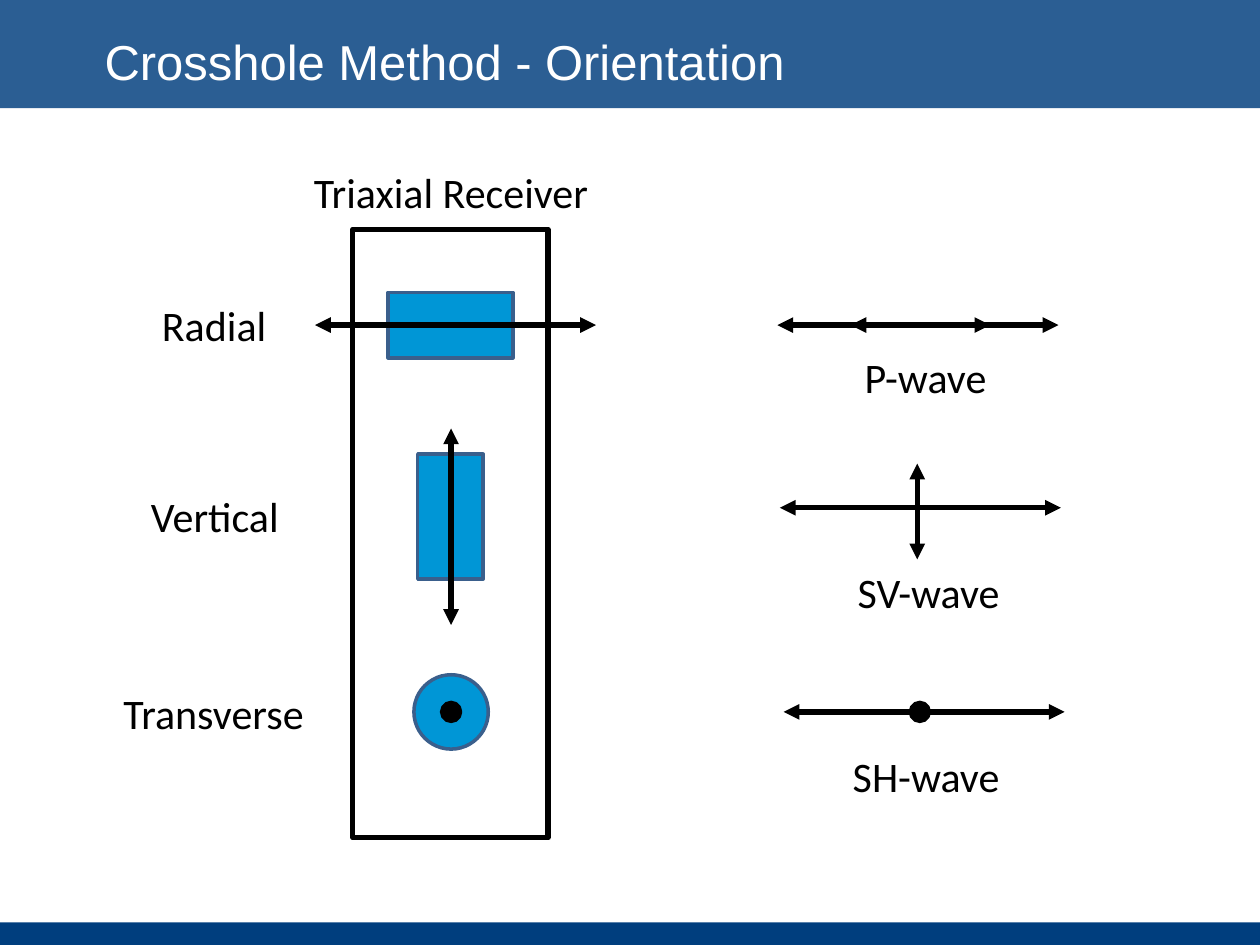
from pptx import Presentation
from pptx.dml.color import RGBColor
from pptx.enum.shapes import MSO_CONNECTOR, MSO_SHAPE
from pptx.enum.text import MSO_ANCHOR, MSO_AUTO_SIZE, PP_ALIGN
from pptx.oxml.ns import qn
from pptx.util import Inches, Pt
from lxml.etree import SubElement

NAVY, SKY, EDGE = "003E7E", "0096D6", "3A5F8C"
BLACK, WHITE = "000000", "FFFFFF"


def tint(text):
    return RGBColor.from_string(text)


class Sketch:
    font, size, stroke = "Calibri", 24, 3

    def __init__(self, slide):
        self.slide = slide
        self.home = slide.shapes

    def group(self):
        """Send the shapes that follow into a new group."""
        self.home = self.slide.shapes.add_group_shape().shapes

    def ungroup(self):
        self.home = self.slide.shapes

    def shape(self, kind, x, y, w, h, fill=None, line=None, width=2, turn=0):
        item = self.home.add_shape(kind, Inches(x), Inches(y), Inches(w), Inches(h))
        item.shadow.inherit = False
        item.rotation = turn
        if fill:
            item.fill.solid()
            item.fill.fore_color.rgb = tint(fill)
        else:
            item.fill.background()
        if line:
            item.line.color.rgb = tint(line)
            item.line.width = Pt(width)
        else:
            item.line.fill.background()
        return item

    def dot(self, x, y, size, fill, line):
        """Draw a circle around its centre."""
        half = size / 2
        self.shape(MSO_SHAPE.OVAL, x - half, y - half, size, size, fill, line)

    def arrow(self, x1, y1, x2, y2):
        """Draw a line with a head at both ends."""
        item = self.home.add_connector(
            MSO_CONNECTOR.STRAIGHT, Inches(x1), Inches(y1), Inches(x2), Inches(y2))
        item.line.color.rgb = tint(BLACK)
        item.line.width = Pt(self.stroke)
        edge = item.line._get_or_add_ln()
        for tag in ("a:headEnd", "a:tailEnd"):
            SubElement(edge, qn(tag), type="triangle")
        SubElement(item.element.spPr, qn("a:effectLst"))

    def label(self, text, x, y, w):
        box = self.slide.shapes.add_textbox(Inches(x), Inches(y), Inches(w), Inches(0.5))
        frame = box.text_frame
        frame.word_wrap = False
        frame.auto_size = MSO_AUTO_SIZE.SHAPE_TO_FIT_TEXT
        frame.text = text
        para = frame.paragraphs[0]
        para.alignment = PP_ALIGN.CENTER
        self.style(para.runs[0].font, self.font, self.size, BLACK)

    def title(self, text):
        item = self.slide.shapes.title
        item.left, item.top = Inches(0.73), Inches(0.19)
        item.width, item.height = Inches(6.77), Inches(0.58)
        frame = item.text_frame
        frame.text = text
        frame.vertical_anchor = MSO_ANCHOR.MIDDLE
        para = frame.paragraphs[0]
        para.alignment = PP_ALIGN.LEFT
        self.style(para.runs[0].font, "Arial", 28, WHITE)
        # Bring the title in front of the banner
        item.element.getparent().append(item.element)

    def style(self, font, name, size, color):
        font.name, font.size = name, Pt(size)
        font.color.rgb = tint(color)


def main():
    deck = Presentation()
    deck.slide_width, deck.slide_height = Inches(10), Inches(7.5)
    art = Sketch(deck.slides.add_slide(deck.slide_layouts[5]))
    rect = MSO_SHAPE.RECTANGLE

    # Header and footer bands
    art.shape(rect, 0, 7.32, 10, 0.18, NAVY)
    banner = art.shape(rect, 0, 0, 10, 0.86, NAVY)
    color = banner.element.spPr.find(qn("a:solidFill")).find(qn("a:srgbClr"))
    SubElement(color, qn("a:alpha"), val="83000")
    art.title("Crosshole Method - Orientation")

    # Receiver with its three sensors
    mid, radial, shear = 3.58, 2.58, 5.65
    art.shape(rect, 2.8, 1.82, 1.55, 4.83, line=BLACK, width=3)
    for top, turn in ((2.32, 0), (3.84, 90)):
        art.shape(rect, 3.08, top, 0.99, 0.52, SKY, EDGE, turn=turn)
    art.dot(mid, shear, 0.59, SKY, EDGE)
    art.arrow(2.5, radial, 4.73, radial)
    art.arrow(mid, 3.4, mid, 4.96)
    art.dot(mid, shear, 0.15, BLACK, BLACK)

    # Wave symbols: travel arrow plus particle motion
    span = 2.23
    for kind, x, y in (("P", 6.17, radial), ("SV", 6.19, 4.03), ("SH", 6.22, shear)):
        art.group()
        art.arrow(x, y, x + span, y)
        if kind == "P":
            art.arrow(6.75, y, 7.86, y)
        elif kind == "SV":
            art.arrow(7.28, 3.68, 7.28, 4.44)
        else:
            art.dot(7.3, y, 0.15, BLACK, BLACK)
    art.ungroup()

    for text, x, y, w in (
        ("Radial", 1.18, 2.33, 1.04),
        ("Vertical", 1.09, 3.84, 1.23),
        ("Transverse", 0.87, 5.41, 1.65),
        ("P-wave", 6.75, 2.74, 1.19),
        ("SV-wave", 6.69, 4.45, 1.36),
        ("SH-wave", 6.66, 5.91, 1.38),
        ("Triaxial Receiver", 2.38, 1.27, 2.4),
    ):
        art.label(text, x, y, w)

    deck.save("out.pptx")


if __name__ == "__main__":
    main()
